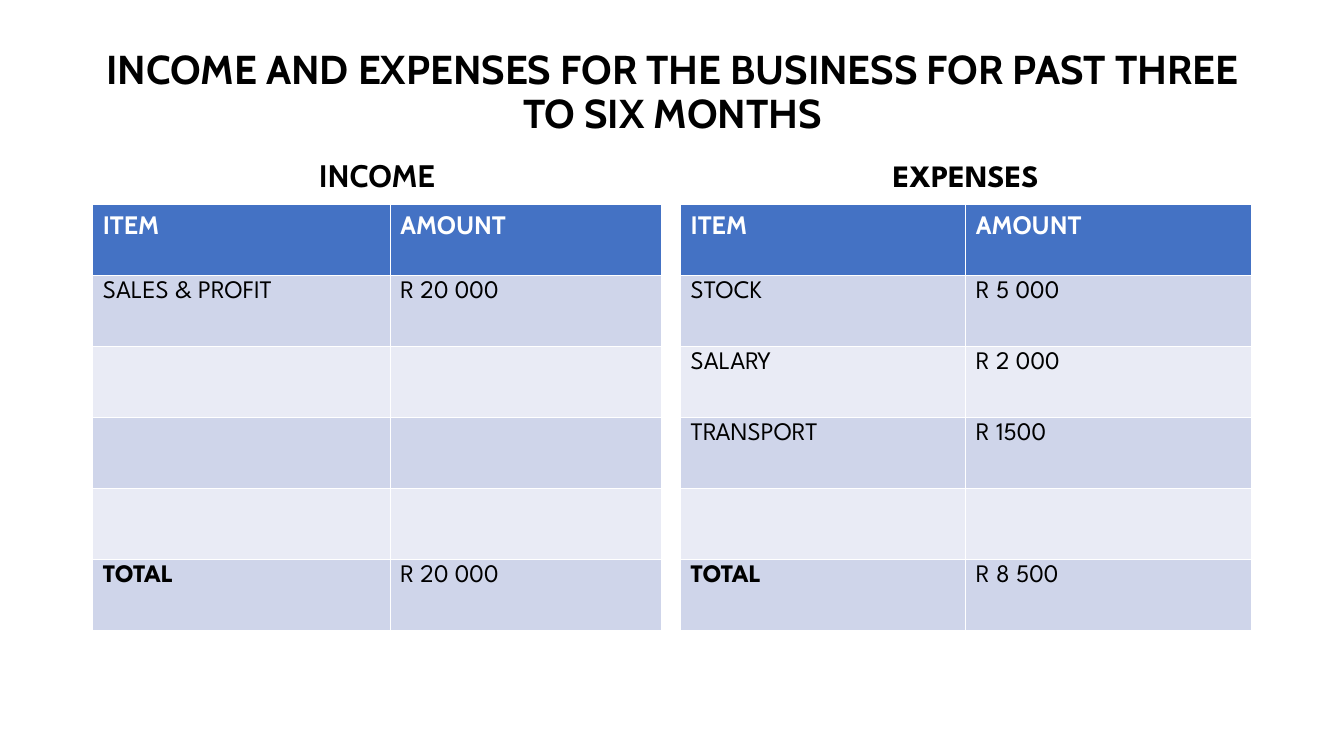
"""Build a slide with income and expenses tables side by side."""
from pptx import Presentation
from pptx import util as u
from pptx.dml.color import RGBColor
from pptx.enum import text

TITLE = "INCOME AND EXPENSES FOR THE BUSINESS FOR PAST THREE TO SIX MONTHS"
HEADER = ("ITEM", "AMOUNT")
BLANK = ("", "")
LEDGERS = [
    {"name": "INCOME", "font": "Cabin", "left": 0.92, "cols": (2.95, 2.69),
     "rows": [HEADER, ("SALES & PROFIT", "R 20 000"), BLANK, BLANK, BLANK,
              ("TOTAL", "R 20 000")]},
    {"name": "EXPENSES", "font": "League Spartan", "left": 6.75, "cols": (2.83, 2.83),
     "rows": [HEADER, ("STOCK", "R 5 000"), ("SALARY", "R 2 000"),
              ("TRANSPORT", "R 1500"), BLANK, ("TOTAL", "R 8 500")]},
]
COLORS = {"ink": "000000", "paper": "FFFFFF", "header": "4472C4",
          "odd": "CFD5EA", "even": "E9EBF5"}
HEADING_TOP, HEADING_H = 1.55, 0.44
TABLE_TOP, TABLE_H = 2.03, 4.23


def rgb(name):
    """Return a named colour."""
    return RGBColor.from_string(COLORS[name])


def style(p, size, font, color="ink", bold=True):
    """Set the font of a paragraph."""
    p.font.size, p.font.name, p.font.bold = u.Pt(size), font, bold
    p.font.color.rgb = rgb(color)


def put_line(sp, box, words, size, font, spacing):
    """Place a shape and give it one centred bold paragraph."""
    sp.left, sp.top, sp.width, sp.height = map(u.Inches, box)
    tf = sp.text_frame
    tf.word_wrap = True
    tf.auto_size = text.MSO_AUTO_SIZE.NONE
    tf.vertical_anchor = text.MSO_ANCHOR.MIDDLE
    p = tf.paragraphs[0]
    p.text = words
    p.alignment = text.PP_ALIGN.CENTER
    p.line_spacing = spacing
    style(p, size, font)


def add_ledger(s, ledger):
    """Add one heading with its table below."""
    left, cols, rows = ledger["left"], ledger["cols"], ledger["rows"]
    width = sum(cols)
    heading = s.shapes.add_textbox(0, 0, 0, 0)
    put_line(heading, (left, HEADING_TOP, width, HEADING_H),
             ledger["name"], 22.2, ledger["font"], 0.8)
    table = s.shapes.add_table(
        len(rows), len(cols), u.Inches(left), u.Inches(TABLE_TOP),
        u.Inches(width), u.Inches(TABLE_H)).table
    for column, w in zip(table.columns, cols):
        column.width = u.Inches(w)
    for i, row in enumerate(rows):
        fill = "header" if i == 0 else "odd" if i % 2 else "even"
        for j, words in enumerate(row):
            cell = table.cell(i, j)
            cell.fill.solid()
            cell.fill.fore_color.rgb = rgb(fill)
            cell.text = words
            p = cell.text_frame.paragraphs[0]
            if i == 0:
                style(p, 18, "Cabin", "paper")
            else:
                style(p, 18, "League Spartan", bold=words == "TOTAL")


def main():
    """Build and save the slide."""
    prs = Presentation()
    prs.slide_width, prs.slide_height = u.Inches(13.33), u.Inches(7.5)
    s = prs.slides.add_slide(prs.slide_layouts[5])
    put_line(s.shapes.title, (0.92, 0.4, 11.5, 1.05), TITLE, 28.8, "Cabin", 0.9)
    for ledger in LEDGERS:
        add_ledger(s, ledger)
    prs.save("out.pptx")


if __name__ == "__main__":
    main()
